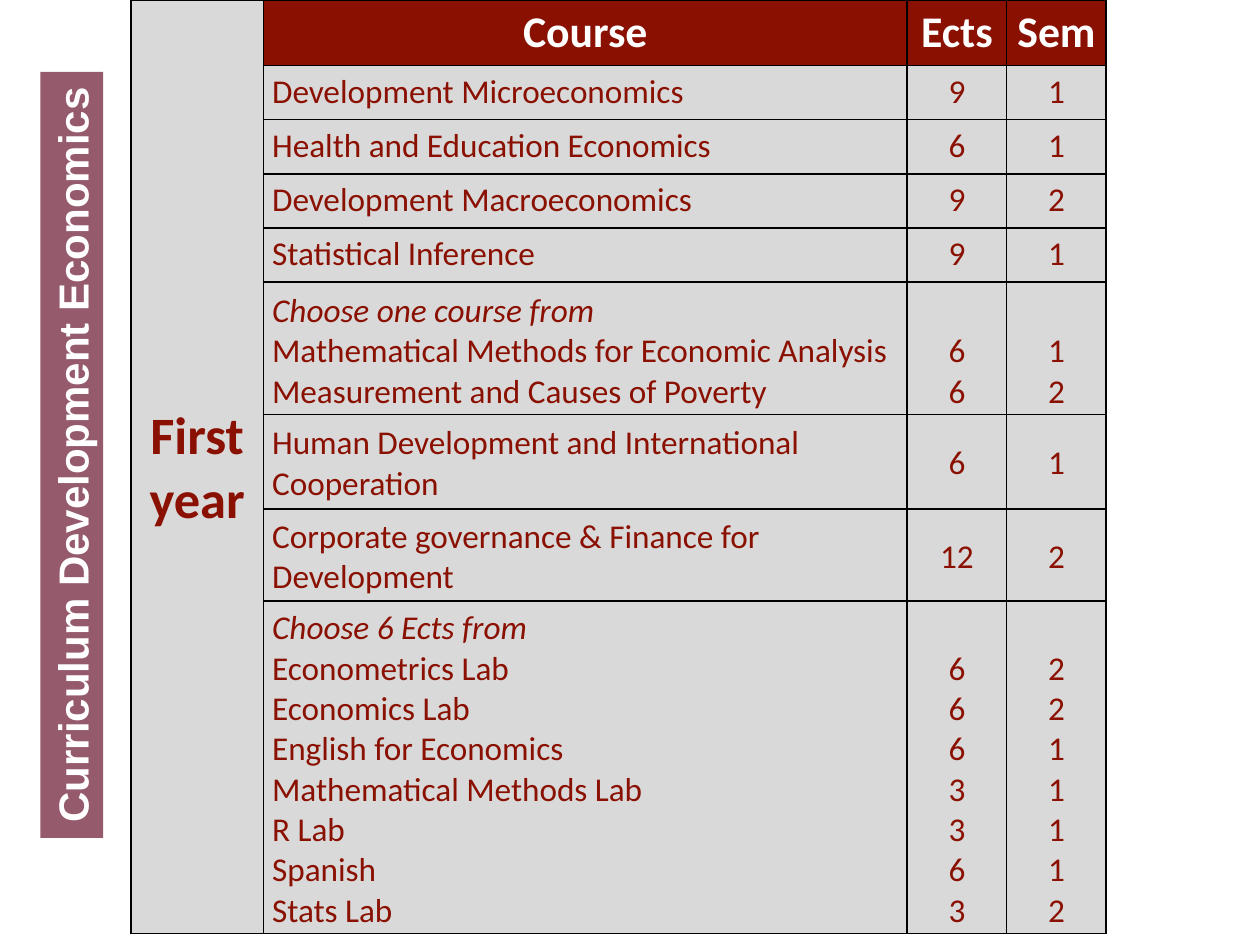
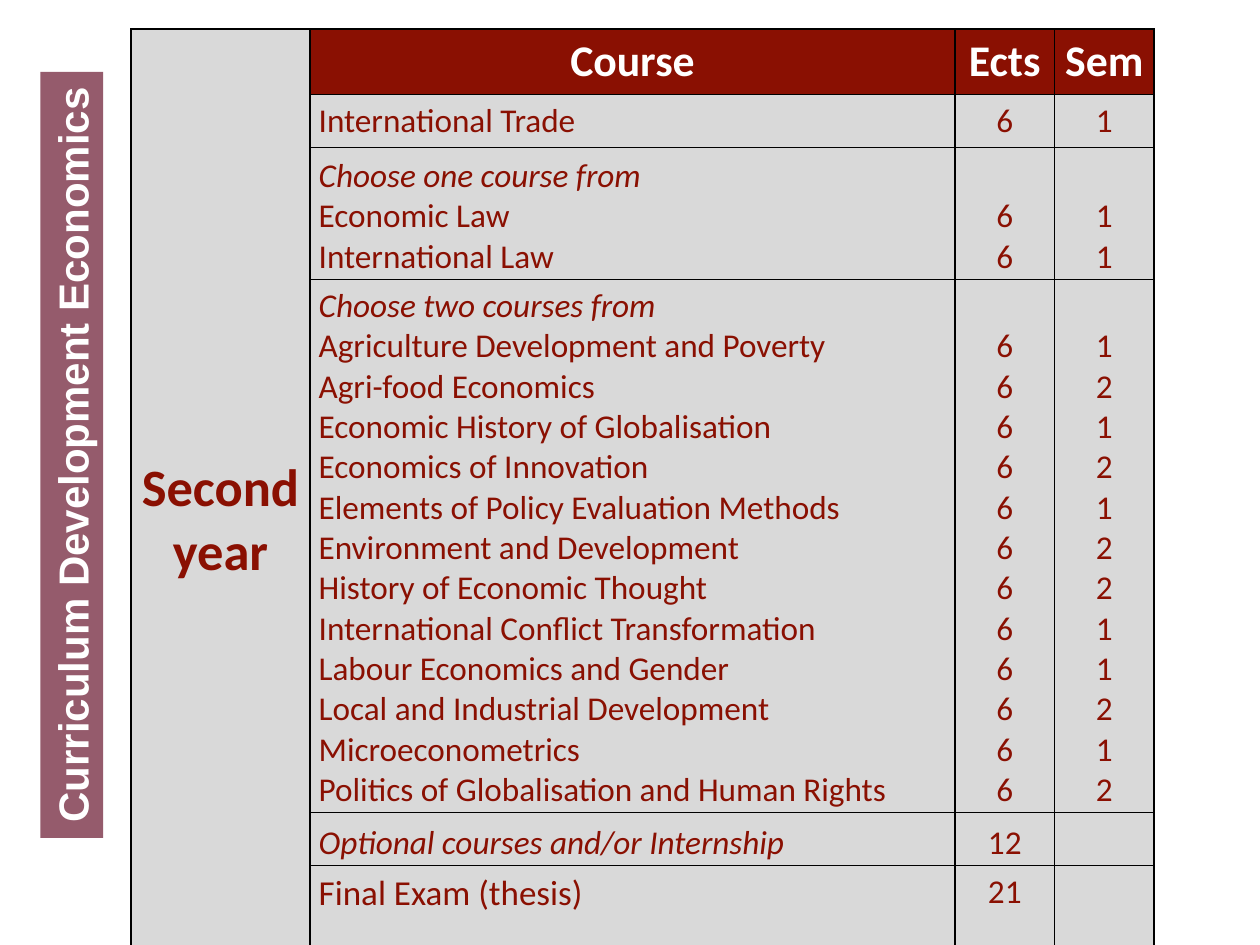
from dataclasses import dataclass
from lxml.etree import SubElement
from pptx import Presentation
from pptx.dml.color import RGBColor
from pptx.enum.shapes import MSO_SHAPE as Shape
from pptx.enum.text import MSO_ANCHOR as Anchor, PP_ALIGN as Align
from pptx.oxml.ns import qn
from pptx.util import Inches, Pt


@dataclass
class Row:
    height: float
    courses: list
    ects: list
    sem: list
    note: str = ""
    anchor: Anchor = Anchor.TOP
    size: int = 19


CURRICULUM = "Curriculum Development Economics"
HEADINGS = ["Course", "Ects", "Sem"]
YEARS = [
    {
        "label": "First year", "top": 0, "columns": [1.05, 5.11, 0.79, 0.79],
        "rows": [
            Row(0.43, ["Development Microeconomics"], [9], [1]),
            Row(0.43, ["Health and Education Economics"], [6], [1]),
            Row(0.43, ["Development Macroeconomics"], [9], [2]),
            Row(0.43, ["Statistical Inference"], [9], [1]),
            Row(1.05, ["Mathematical Methods for Economic Analysis",
                       "Measurement and Causes of Poverty"],
                [6, 6], [1, 2], note="Choose one course from"),
            Row(0.75, ["Human Development and International Cooperation"],
                [6], [1], anchor=Anchor.MIDDLE),
            Row(0.73, ["Corporate governance & Finance for Development"],
                [12], [2], anchor=Anchor.MIDDLE),
            Row(2.64, ["Econometrics Lab", "Economics Lab", "English for Economics",
                       "Mathematical Methods Lab", "R Lab", "Spanish", "Stats Lab"],
                [6, 6, 6, 3, 3, 6, 3], [2, 2, 1, 1, 1, 1, 2],
                note="Choose 6 Ects from"),
        ],
    },
    {
        "label": "Second year", "top": 0.23, "columns": [1.42, 5.12, 0.79, 0.79],
        "rows": [
            Row(0.42, ["International Trade"], [6], [1]),
            Row(1.05, ["Economic Law", "International Law"], [6, 6], [1, 1],
                note="Choose one course from"),
            Row(4.21, ["Agriculture Development and Poverty",
                       "Agri-food Economics",
                       "Economic History of Globalisation",
                       "Economics of Innovation",
                       "Elements of Policy Evaluation Methods",
                       "Environment and Development",
                       "History of Economic Thought",
                       "International Conflict Transformation",
                       "Labour Economics and Gender",
                       "Local and Industrial Development",
                       "Microeconometrics",
                       "Politics of Globalisation and Human Rights"],
                [6] * 12, [1, 2, 1, 2, 1, 2, 2, 1, 1, 2, 1, 2],
                note="Choose two courses from"),
            Row(0.42, [], [12], [], note="Optional courses and/or Internship"),
            Row(1.13, ["Final Exam (thesis)"], [21], [], size=20),
        ],
    },
]

RED, GREY, MAUVE, WHITE, BLACK = "8A1002", "D9D9D9", "955B6C", "FFFFFF", "000000"
TABLE_LEFT, HEADER_HEIGHT = 1.04, 0.52
BAND = (-2.47, 3.36, 6.08, 0.5)


def paint(fill, color):
    fill.solid()
    fill.fore_color.rgb = RGBColor.from_string(color)


def style(frame, size, color, align, bold=False, face="Calibri"):
    for paragraph in frame.paragraphs:
        paragraph.alignment = align
        for run in paragraph.runs:
            run.font.name, run.font.size, run.font.bold = face, Pt(size), bold
            run.font.color.rgb = RGBColor.from_string(color)


def draw_borders(cell):
    properties = cell._tc.get_or_add_tcPr()
    for place, side in enumerate(("lnL", "lnR", "lnT", "lnB")):
        line = SubElement(properties, qn(f"a:{side}"), w=str(Pt(0.96)))
        properties.insert(place, line)
        SubElement(SubElement(line, qn("a:solidFill")), qn("a:srgbClr"), val=BLACK)


def fill_cell(cell, lines, size, color=RED, align=Align.CENTER, bold=False,
              back=GREY, anchor=Anchor.TOP):
    paint(cell.fill, back)
    draw_borders(cell)
    cell.margin_left = cell.margin_right = Inches(0.07)
    cell.margin_top, cell.margin_bottom = Inches(0.05), Inches(0.02)
    cell.vertical_anchor = anchor
    if lines:
        cell.text_frame.text = "\n".join(map(str, lines))
        style(cell.text_frame, size, color, align, bold)


def add_year_table(slide, year):
    rows, columns = year["rows"], year["columns"]
    heights = [HEADER_HEIGHT] + [row.height for row in rows]
    table = slide.shapes.add_table(
        len(heights), len(columns), Inches(TABLE_LEFT), Inches(year["top"]),
        Inches(sum(columns)), Inches(sum(heights))).table
    table.first_row = table.horz_banding = False
    for column, width in zip(table.columns, columns):
        column.width = Inches(width)
    for line, height in zip(table.rows, heights):
        line.height = Inches(height)

    for r in range(len(heights)):
        fill_cell(table.cell(r, 0), [year["label"]] if r == 0 else [], 30,
                  bold=True, anchor=Anchor.MIDDLE)
    table.cell(0, 0).merge(table.cell(len(rows), 0))
    for c, heading in enumerate(HEADINGS, 1):
        fill_cell(table.cell(0, c), [heading], 25, WHITE, bold=True, back=RED)

    for r, row in enumerate(rows, 1):
        course = table.cell(r, 1)
        anchor = Anchor.BOTTOM if row.note else row.anchor
        fill_cell(course, ([row.note] if row.note else []) + row.courses,
                  row.size, align=Align.LEFT, anchor=anchor)
        if row.note:
            course.text_frame.paragraphs[0].runs[0].font.italic = True
        for c, values in enumerate((row.ects, row.sem), 2):
            fill_cell(table.cell(r, c), values, 19, anchor=anchor)


def add_band(slide):
    band = slide.shapes.add_shape(Shape.RECTANGLE, *map(Inches, BAND))
    band.rotation = 270
    band.shadow.inherit = False
    paint(band.fill, MAUVE)
    band.line.fill.background()
    band.text_frame.word_wrap = False
    band.text_frame.text = CURRICULUM
    style(band.text_frame, 24, WHITE, Align.CENTER, bold=True, face="Arial")


def main():
    deck = Presentation()
    deck.slide_width, deck.slide_height = Inches(10), Inches(7.5)
    for year in YEARS:
        slide = deck.slides.add_slide(deck.slide_layouts[6])
        add_year_table(slide, year)
        add_band(slide)
    deck.save("out.pptx")


if __name__ == "__main__":
    main()
